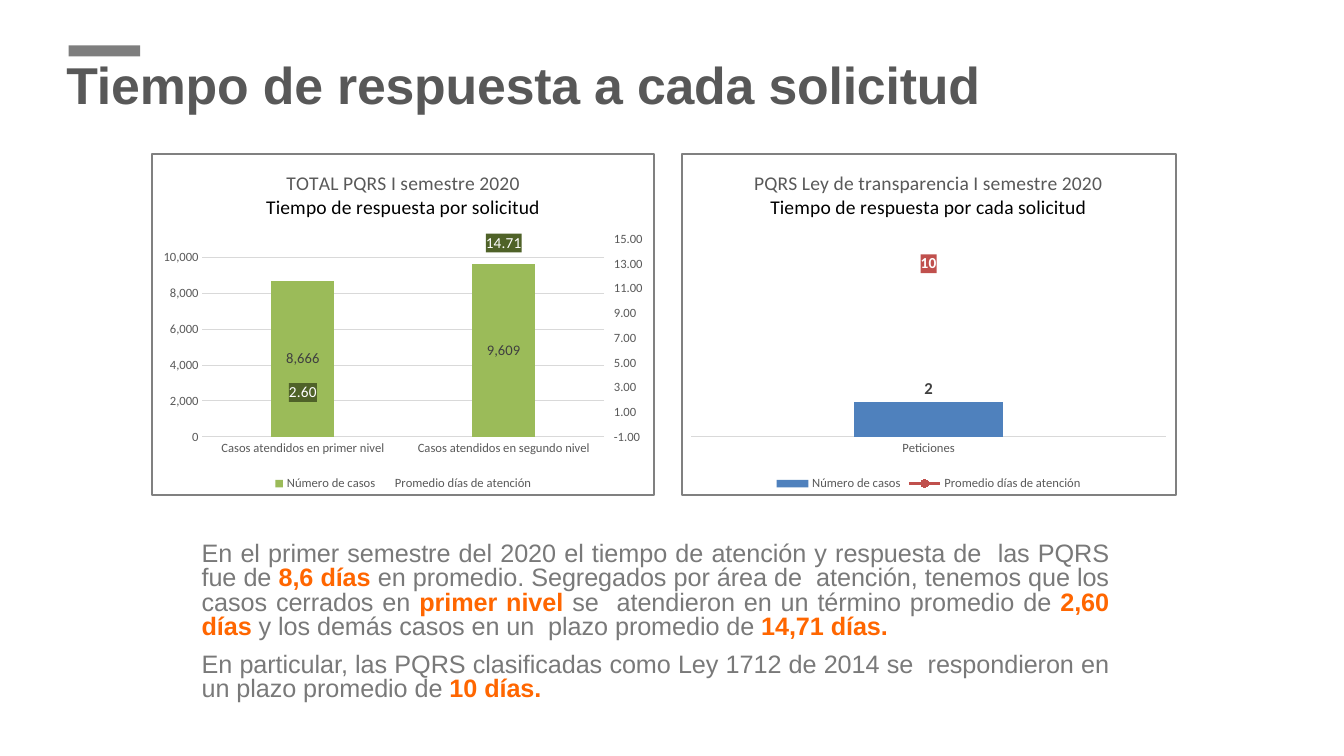
import pptx
import pptx.chart.data
import pptx.dml.color
import pptx.enum.chart
import pptx.enum.shapes
import pptx.enum.text
import pptx.oxml
import pptx.oxml.ns
import pptx.util

Inches = pptx.util.Inches
Pt = pptx.util.Pt
qn = pptx.oxml.ns.qn
POSITION = pptx.enum.chart.XL_LABEL_POSITION
TICK = pptx.enum.chart.XL_TICK_MARK

COLORS = {
    "bar": "7E7E7E", "title": "585858", "body": "797979", "accent": "FF6600",
    "axis": "595959", "grid": "D9D9D9", "border": "808080", "label": "404040",
    "black": "000000", "white": "FFFFFF", "green": "9BBB59",
    "dark_green": "4F6228", "blue": "4F81BD", "red": "C0504D",
}
NS = ('xmlns:c="http://schemas.openxmlformats.org/drawingml/2006/chart" '
      'xmlns:a="http://schemas.openxmlformats.org/drawingml/2006/main"')


def rgb(name):
    return pptx.dml.color.RGBColor.from_string(COLORS[name])


def chart_xml(tag, content):
    return pptx.oxml.parse_xml(f"<c:{tag} {NS}>{content}</c:{tag}>")


def solid(name):
    return f'<a:solidFill><a:srgbClr val="{COLORS[name]}"/></a:solidFill>'


def style_font(font, size, color, bold=False, family="Calibri"):
    font.size = Pt(size)
    font.bold = bold
    font.name = family
    font.color.rgb = rgb(color)


def write(paragraph, text, size=18, color="body", bold=False, family="Arial", spacing=0):
    run = paragraph.add_run()
    run.text = text
    style_font(run.font, size, color, bold, family)
    if spacing:
        run.font._element.set("spc", str(spacing))


def add_frame(slide, left, top, width, height, inset_top):
    frame = slide.shapes.add_textbox(
        Inches(left), Inches(top), Inches(width), Inches(height)).text_frame
    frame.word_wrap = True
    frame.margin_left = frame.margin_right = frame.margin_bottom = 0
    frame.margin_top = Inches(inset_top)
    return frame


def add_heading(slide, left, top, width, height):
    accent_bar = slide.shapes.add_shape(
        pptx.enum.shapes.MSO_SHAPE.RECTANGLE,
        Inches(left + 0.02), Inches(top - 0.06), Inches(0.71), Inches(0.11))
    accent_bar.shadow.inherit = False
    accent_bar.fill.solid()
    accent_bar.fill.fore_color.rgb = rgb("bar")
    accent_bar.line.fill.background()
    heading = add_frame(slide, left, top, width, height, 0.01).paragraphs[0]
    write(heading, "Tiempo de respuesta a cada solicitud", 37, "title", True, spacing=-10)


def add_summary(slide, left, top, width, height):
    frame = add_frame(slide, left, top, width, height, 0.07)
    response_times = (
        ("En el primer semestre del 2020 el tiempo de atención y respuesta de  las "
         "PQRS fue de ", "8,6 días ",
         "en promedio. Segregados por área de  atención, tenemos que los casos "
         "cerrados en ", "primer nivel ",
         "se  atendieron en un término promedio de ", "2,60 días ",
         "y los demás casos en un  plazo promedio de ", "14,71 días."), 0.8, 0)
    transparency_law = (
        ("En particular, las PQRS clasificadas como Ley 1712 de 2014 se  "
         "respondieron en un plazo promedio de ", "10 días."), Pt(17.3), 9.8)
    for index, (parts, line_spacing, before) in enumerate((response_times, transparency_law)):
        paragraph = frame.add_paragraph() if index else frame.paragraphs[0]
        paragraph.alignment = pptx.enum.text.PP_ALIGN.JUSTIFY
        paragraph.line_spacing = line_spacing
        paragraph.space_before = Pt(before)
        for position, part in enumerate(parts):
            highlighted = position % 2 == 1
            write(paragraph, part, color="accent" if highlighted else "body",
                  bold=highlighted, spacing=-5)


def move_days_to_line(chart, grouping, secondary):
    bars = chart._chartSpace.find(".//" + qn("c:barChart"))
    days = bars.findall(qn("c:ser"))[1]
    for invert in days.findall(qn("c:invertIfNegative")):
        days.remove(invert)
    axis_ids = [axis.get("val") for axis in bars.findall(qn("c:axId"))]
    if secondary:
        axis_ids = ["50010", "50020"]
    line = chart_xml(
        "lineChart", f'<c:grouping val="{grouping}"/><c:varyColors val="0"/><c:marker val="1"/>'
        + "".join(f'<c:axId val="{axis_id}"/>' for axis_id in axis_ids))
    line.insert(2, days)
    bars.addnext(line)
    if secondary:
        category, value = axis_ids
        start = '<c:axId val="{}"/><c:scaling><c:orientation val="minMax"/>{}</c:scaling><c:delete val="{}"/>'
        hidden_axis = chart_xml(
            "catAx", start.format(category, "", 1)
            + f'<c:axPos val="b"/><c:crossAx val="{value}"/><c:crosses val="autoZero"/>')
        days_axis = chart_xml(
            "valAx", start.format(value, '<c:max val="15"/><c:min val="-1"/>', 0)
            + '<c:axPos val="r"/><c:numFmt formatCode="0.00" sourceLinked="0"/>'
            '<c:majorTickMark val="out"/><c:minorTickMark val="none"/><c:tickLblPos val="nextTo"/>'
            '<c:spPr><a:ln><a:noFill/></a:ln></c:spPr><c:txPr><a:bodyPr/><a:p><a:pPr>'
            f'<a:defRPr sz="900" b="0">{solid("axis")}<a:latin typeface="Calibri"/></a:defRPr>'
            f'</a:pPr><a:endParaRPr lang="es"/></a:p></c:txPr><c:crossAx val="{category}"/>'
            '<c:crosses val="max"/><c:majorUnit val="2"/>')
        last_axis = chart._chartSpace.findall(".//" + qn("c:valAx"))[-1]
        last_axis.addnext(hidden_axis)
        hidden_axis.addnext(days_axis)


def label_series(series, size, color, position, number_format, bold=False, fill=None):
    labels = series.data_labels
    labels.show_value = True
    labels.position = position
    labels.number_format = number_format
    labels.number_format_is_linked = False
    style_font(labels.font, size, color, bold)
    if fill:
        labels._element.find(qn("c:txPr")).addprevious(chart_xml("spPr", solid(fill)))


def add_cases_chart(slide, left, top, width, height, titles, categories, cases, days,
                    case_color, grouping, layout, secondary=False):
    data = pptx.chart.data.CategoryChartData()
    data.categories = categories
    data.add_series("Número de casos", cases)
    data.add_series("Promedio días de atención", days)
    chart = slide.shapes.add_chart(
        pptx.enum.chart.XL_CHART_TYPE.COLUMN_CLUSTERED,
        Inches(left), Inches(top), Inches(width), Inches(height), data).chart
    style_font(chart.font, 10, "black")
    chart._chartSpace.find(qn("c:txPr")).addprevious(chart_xml(
        "spPr", solid("white") + f'<a:ln w="19050">{solid("border")}</a:ln>'))

    title_frame = chart.chart_title.text_frame
    for index, (text, color) in enumerate(zip(titles, ("axis", "black"))):
        paragraph = title_frame.add_paragraph() if index else title_frame.paragraphs[0]
        write(paragraph, text, 14, color, family="Calibri")
    chart.chart_title.include_in_layout = False
    chart.has_legend = True
    chart.legend.position = pptx.enum.chart.XL_LEGEND_POSITION.BOTTOM
    chart.legend.include_in_layout = False
    style_font(chart.legend.font, 9, "axis")

    for axis in (chart.category_axis, chart.value_axis):
        axis.major_tick_mark = axis.minor_tick_mark = TICK.NONE
        style_font(axis.tick_labels.font, 9, "axis")
    chart.category_axis.format.line.color.rgb = rgb("grid")
    chart.category_axis.format.line.width = Pt(0.75)
    cases_axis = chart.value_axis
    cases_axis.minimum_scale = 0
    cases_axis.maximum_scale = 11000 if secondary else 12
    cases_axis.has_major_gridlines = cases_axis.visible = secondary
    if secondary:
        cases_axis.major_unit = 2000
        cases_axis.tick_labels.number_format = "#,##0"
        cases_axis.tick_labels.number_format_is_linked = False
        cases_axis.format.line.fill.background()
        cases_axis.major_gridlines.format.line.color.rgb = rgb("grid")
        cases_axis.major_gridlines.format.line.width = Pt(0.75)

    move_days_to_line(chart, grouping, secondary)
    case_plot, days_plot = chart.plots
    case_plot.gap_width = 219
    case_plot.overlap = 0 if secondary else -27
    case_plot.vary_by_categories = False
    case_series, days_series = case_plot.series[0], days_plot.series[0]
    case_series.format.fill.solid()
    case_series.format.fill.fore_color.rgb = rgb(case_color)
    days_series.smooth = False
    if secondary:
        days_series.format.line.fill.background()
        days_series.marker.style = pptx.enum.chart.XL_MARKER_STYLE.NONE
        label_series(case_series, 10.5, "label", POSITION.CENTER, "#,##0")
        label_series(days_series, 11, "white", POSITION.CENTER, "0.00", fill="dark_green")
    else:
        days_series.format.line.color.rgb = rgb("red")
        days_series.format.line.width = Pt(2.25)
        days_series.marker.style = pptx.enum.chart.XL_MARKER_STYLE.CIRCLE
        days_series.marker.size = 5
        days_series.marker.format.fill.solid()
        days_series.marker.format.fill.fore_color.rgb = rgb("red")
        days_series.marker.format.line.color.rgb = rgb("red")
        label_series(case_series, 12, "label", POSITION.OUTSIDE_END, "General", True)
        label_series(days_series, 11, "white", POSITION.CENTER, "General", True, "red")

    plot_area = chart._chartSpace.find(".//" + qn("c:plotArea"))
    for automatic in plot_area.findall(qn("c:layout")):
        plot_area.remove(automatic)
    plot_area.insert(0, chart_xml(
        "layout", '<c:manualLayout><c:layoutTarget val="inner"/><c:xMode val="edge"/>'
        '<c:yMode val="edge"/>'
        + "".join(f'<c:{key} val="{value}"/>' for key, value in zip("xywh", layout))
        + "</c:manualLayout>"))


def main():
    presentation = pptx.Presentation()
    presentation.slide_width = Inches(13.33)
    presentation.slide_height = Inches(7.5)
    slide = presentation.slides.add_slide(presentation.slide_layouts[6])
    add_heading(slide, 0.66, 0.51, 9.16, 0.64)
    add_summary(slide, 2, 5.32, 9, 1.66)
    add_cases_chart(
        slide, 1.5, 1.52, 5, 3.4,
        ("TOTAL PQRS I semestre 2020", "Tiempo de respuesta por solicitud"),
        ("Casos atendidos en primer nivel", "Casos atendidos en segundo nivel"),
        (8666, 9609), (2.6, 14.71), "green", "standard", (0.1, 0.25, 0.8, 0.58), True)
    add_cases_chart(
        slide, 6.75, 1.52, 4.92, 3.4,
        ("PQRS Ley de transparencia I semestre 2020", "Tiempo de respuesta por cada solicitud"),
        ("Peticiones",), (2,), (10,), "blue", "stacked", (0.02, 0.22, 0.96, 0.61))
    presentation.save("out.pptx")


if __name__ == "__main__":
    main()
